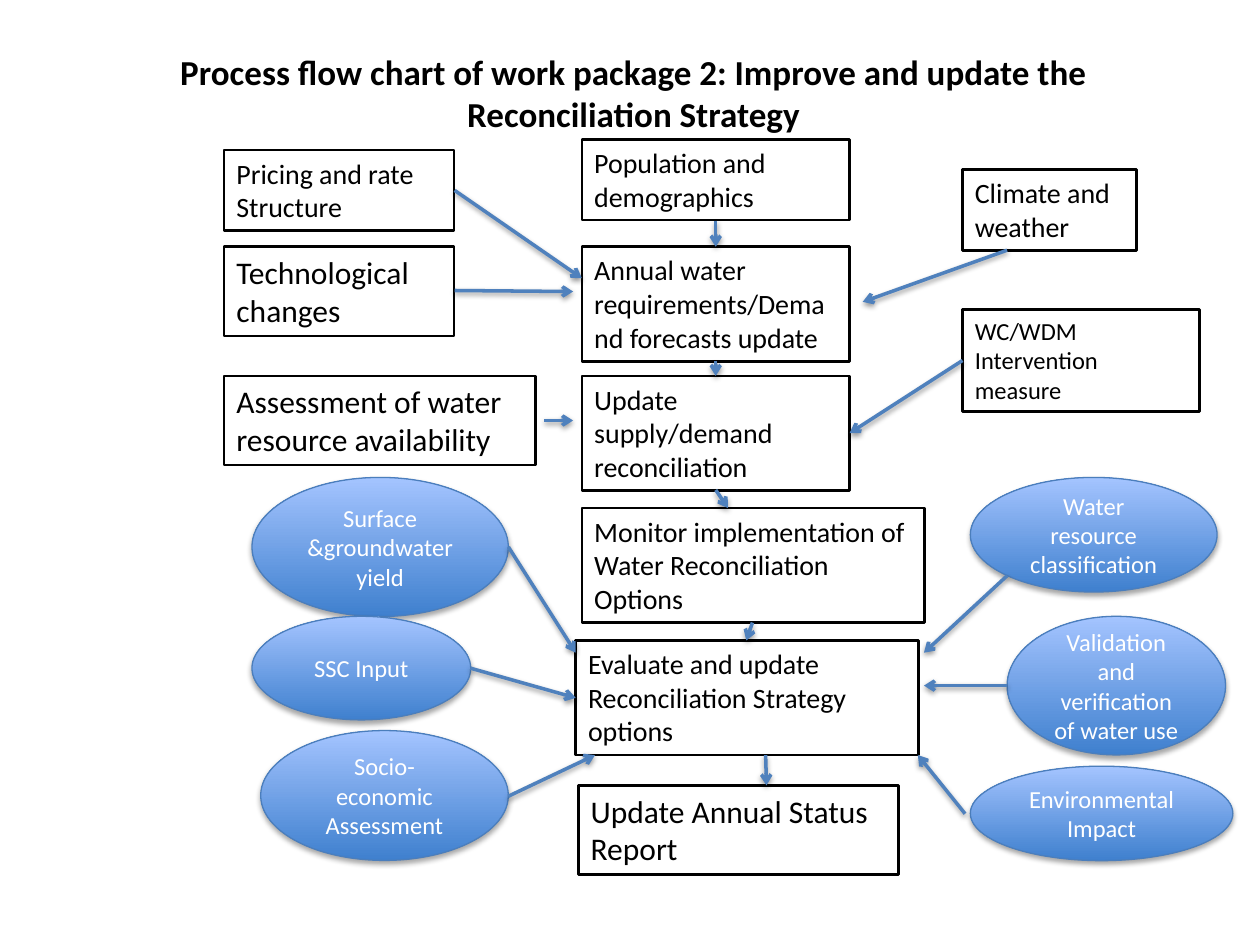
from typing import NamedTuple

from lxml.etree import SubElement
from pptx import Presentation
from pptx.dml.color import RGBColor
from pptx.enum.shapes import MSO_CONNECTOR, MSO_SHAPE
from pptx.enum.text import MSO_ANCHOR, MSO_AUTO_SIZE, PP_ALIGN
from pptx.oxml.ns import qn
from pptx.util import Pt

FONT = "Calibri"
COLORS = {"ink": "000000", "paper": "FFFFFF", "arrow": "4F81BD",
          "edge": "4B7EBC", "deep": "3F80CE", "pale": "A4C4FF"}


class Node(NamedTuple):
    text: str
    left: float
    top: float
    width: float
    height: float
    size: int = 16


class Link(NamedTuple):
    x1: float
    y1: float
    x2: float
    y2: float


def color(name: str) -> RGBColor:
    return RGBColor.from_string(COLORS[name])


def style(para, size: int, name: str, align=PP_ALIGN.LEFT, bold=False) -> None:
    para.alignment = align
    font = para.font
    font.name, font.size, font.bold = FONT, Pt(size), bold
    font.color.rgb = color(name)


def shade(shape, alpha: int, gap: float) -> None:
    """Add a soft shadow straight below the shape."""
    props = shape._element.spPr
    for old in props.findall(qn("a:effectLst")):
        props.remove(old)
    effects = SubElement(props, qn("a:effectLst"))
    shadow = SubElement(effects, qn("a:outerShdw"), blurRad=str(Pt(3.1)),
                        dist=str(Pt(gap)), dir="5400000", rotWithShape="0")
    black = SubElement(shadow, qn("a:srgbClr"), val=COLORS["ink"])
    SubElement(black, qn("a:alpha"), val=str(alpha * 1000))


def draw_box(slide, node: Node) -> None:
    box = slide.shapes.add_textbox(*map(Pt, node[1:5]))
    box.line.color.rgb = color("ink")
    box.line.width = Pt(1.5)
    frame = box.text_frame
    frame.word_wrap = True
    frame.auto_size = MSO_AUTO_SIZE.SHAPE_TO_FIT_TEXT
    frame.text = node.text
    style(frame.paragraphs[0], node.size, "ink")


def draw_oval(slide, node: Node) -> None:
    oval = slide.shapes.add_shape(MSO_SHAPE.OVAL, *map(Pt, node[1:5]))
    oval.fill.gradient()
    oval.fill.gradient_angle = 90
    for stop, name in zip(oval.fill.gradient_stops, ("deep", "pale")):
        stop.color.rgb = color(name)
    oval.line.color.rgb = color("edge")
    oval.line.width = Pt(0.75)
    shade(oval, 35, 1.8)
    frame = oval.text_frame
    frame.word_wrap = True
    frame.vertical_anchor = MSO_ANCHOR.MIDDLE
    frame.text = node.text
    style(frame.paragraphs[0], node.size, "paper", PP_ALIGN.CENTER)


def draw_link(slide, link: Link) -> None:
    line = slide.shapes.add_connector(MSO_CONNECTOR.STRAIGHT, *map(Pt, link))
    line.line.color.rgb = color("arrow")
    line.line.width = Pt(2)
    SubElement(line.line._get_or_add_ln(), qn("a:tailEnd"), type="arrow")
    shade(line, 38, 1.6)


# Columns and box heights by number of lines
LEFT, MID, RIGHT = 128, 332.5, 550
TWO, TWO_BIG, THREE = 46, 51, 65.5
AXIS = 409

BOXES = [
    # Main flow
    Node("Population and demographics", MID, 79.8, 153, TWO),
    Node("Annual water requirements/Demand forecasts update", MID, 141, 153, THREE),
    Node("Update supply/demand reconciliation", MID, 214.8, 153, THREE),
    Node("Monitor implementation of Water Reconciliation Options",
         MID, 290.3, 196, THREE),
    Node("Evaluate and update Reconciliation Strategy options",
         329, 366, 196, THREE),
    Node("Update Annual Status Report", 330.5, 448.8, 183, TWO_BIG, 18),
    # Inputs on the left
    Node("Pricing and rate Structure", LEFT, 85.8, 131.5, TWO),
    Node("Technological changes", LEFT, 141, 131.5, TWO_BIG, 18),
    Node("Assessment of water resource availability",
         LEFT, 214.8, 178, TWO_BIG, 18),
    # Inputs on the right
    Node("Climate and weather", RIGHT, 97, 99.5, TWO),
    Node("WC/WDM Intervention measure", RIGHT, 177, 135.5, 58.2, 14),
]

OVALS = [
    Node("Surface &groundwater yield", 144, 272.8, 146.5, 79.5, 14),
    Node("SSC Input", 144, 352.2, 125, 59.2, 14),
    Node("Socio-economic Assessment", 149, 417.5, 141.5, 74.2, 14),
    Node("Water resource classification", 554.5, 272.8, 141, 65.5, 14),
    Node("Validation and verification of water use", 575.5, 352.2, 124.8, 79.2, 14),
    Node("Environmental Impact", 554.5, 437.8, 150, 54, 14),
]

LINKS = [
    # Down the main flow
    Link(AXIS, 126, AXIS, 141),
    Link(AXIS, 206.2, AXIS, 214.8),
    Link(AXIS, 280, 416, 290.3),
    Link(430, 355.8, 426.5, 366),
    Link(437.5, 431.5, 438, 448.8),
    # From the left
    Link(259.8, 108.8, MID, 159),
    Link(259.8, 166, 327.5, 166.6),
    Link(311, 240.3, 327.5, 240.3),
    Link(290.5, 312.5, 329, 373),
    Link(268.8, 381.8, 329, 398.8),
    Link(290.5, 455, 340, 431.5),
    # From the right
    Link(575.5, 143, 493, 172.5),
    Link(RIGHT, 206, 485.5, 247.5),
    Link(575.5, 329, 528, 373),
    Link(575.5, 391.8, 528, 391.8),
    Link(551.5, 465, 524.5, 431.5),
]


def main() -> None:
    deck = Presentation()
    deck.slide_width, deck.slide_height = Pt(720), Pt(540)
    slide = deck.slides.add_slide(deck.slide_layouts[5])

    # Title
    title = slide.shapes.title
    title.left, title.top, title.width, title.height = map(Pt, (38, 25, 648, 32))
    frame = title.text_frame
    frame.word_wrap = True
    frame.auto_size = MSO_AUTO_SIZE.NONE
    frame.vertical_anchor = MSO_ANCHOR.TOP
    frame.text = ("Process flow chart of work package 2: "
                  "Improve and update the Reconciliation Strategy")
    style(frame.paragraphs[0], 20, "ink", PP_ALIGN.CENTER, bold=True)

    # Flow chart
    for node in BOXES:
        draw_box(slide, node)
    for node in OVALS:
        draw_oval(slide, node)
    for link in LINKS:
        draw_link(slide, link)

    deck.save("out.pptx")


if __name__ == "__main__":
    main()
